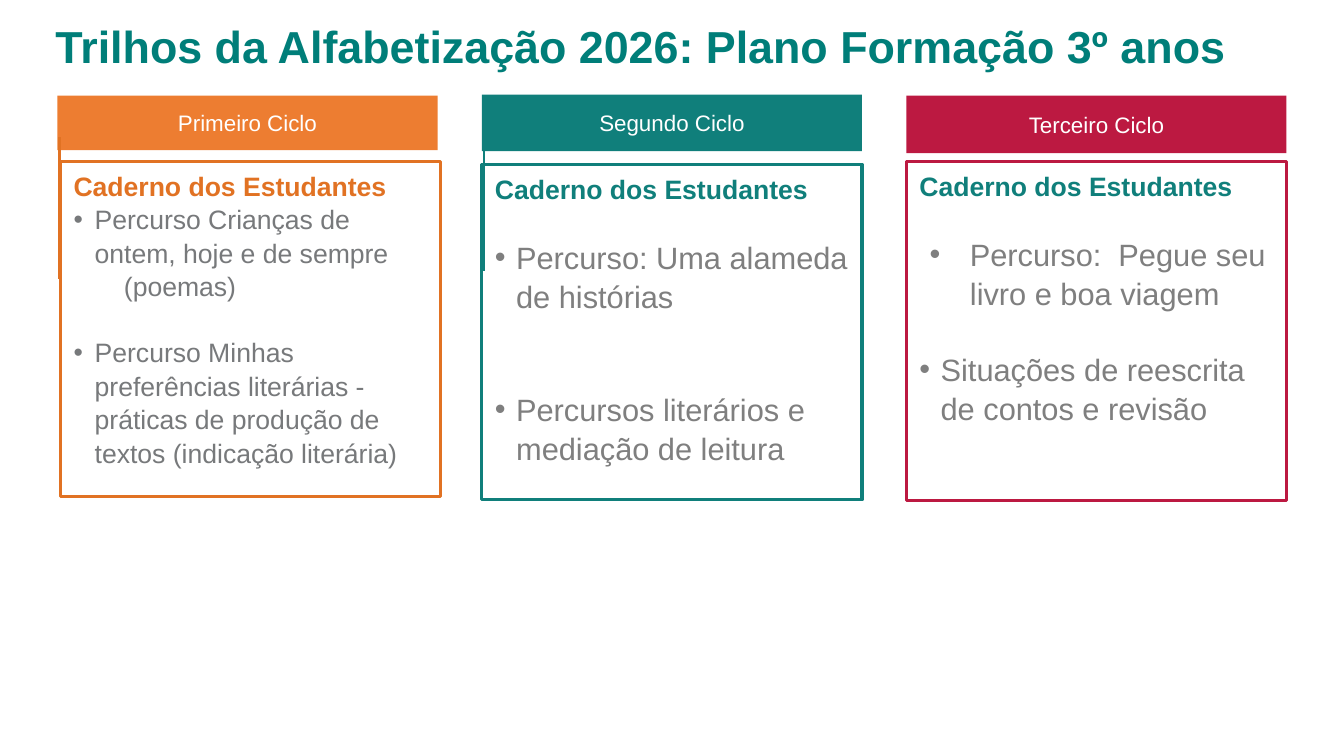
from dataclasses import dataclass

from lxml import etree
from pptx import Presentation
from pptx.dml.color import RGBColor
from pptx.enum.shapes import MSO_CONNECTOR, MSO_SHAPE
from pptx.enum.text import MSO_ANCHOR, MSO_AUTO_SIZE, PP_ALIGN
from pptx.oxml.ns import qn
from pptx.util import Inches, Pt


@dataclass(frozen=True)
class Theme:
    font: str = "Arial"
    title: str = "007E79"
    white: str = "FFFFFF"
    orange: str = "ED7D31"
    dark_orange: str = "E17223"
    teal: str = "107F7B"
    crimson: str = "BC1941"
    slate: str = "77797B"
    gray: str = "7F7F7F"
    title_size: int = 32
    header_size: int = 16
    small_size: int = 19
    large_size: int = 22
    line_spacing: float = 1.05


THEME = Theme()
COLUMN_LEFT, COLUMN_STEP, COLUMN_WIDTH = 0.57, 4.21, 3.77
HEADING = "Caderno dos Estudantes"


@dataclass(frozen=True)
class Item:
    text: str
    gap: float = 0  # points before the paragraph
    margin: float = 0.21
    hanging: float = 0.21  # zero means no bullet


@dataclass(frozen=True)
class Cycle:
    name: str
    header: tuple  # top, height, fill
    box: tuple  # left offset, top, height, line colour
    heading_color: str
    body: tuple  # size, colour
    items: tuple


CYCLES = (
    Cycle("Primeiro Ciclo", (0.95, 0.54, THEME.orange),
          (0.03, 1.6, 3.33, THEME.dark_orange), THEME.dark_orange,
          (THEME.small_size, THEME.slate), (
              Item("Percurso Crianças de ontem, hoje e de sempre"),
              Item("(poemas)", margin=0.5, hanging=0),
              Item("Percurso Minhas preferências literárias - práticas de "
                   "produção de textos (indicação literária)", gap=23))),
    Cycle("Segundo Ciclo", (0.94, 0.56, THEME.teal),
          (0, 1.63, 3.33, THEME.teal), THEME.teal,
          (THEME.large_size, THEME.gray), (
              Item("Percurso: Uma alameda de histórias", gap=23),
              Item("Percursos literários e mediação de leitura", gap=53))),
    Cycle("Terceiro Ciclo", (0.95, 0.57, THEME.crimson),
          (0, 1.6, 3.37, THEME.crimson), THEME.teal,
          (THEME.large_size, THEME.gray), (
              Item("Percurso:  Pegue seu livro e boa viagem",
                   gap=23, margin=0.5, hanging=0.4),
              Item("Situações de reescrita de contos e revisão", gap=26.5))),
)


def color(value):
    return RGBColor.from_string(value)


def format_runs(paragraph, size, value, bold=False):
    for run in paragraph.runs:
        run.font.name = THEME.font
        run.font.size = Pt(size)
        run.font.bold = bold
        run.font.color.rgb = color(value)


def set_insets(text_frame, horizontal, vertical):
    text_frame.margin_left = text_frame.margin_right = Inches(horizontal)
    text_frame.margin_top = text_frame.margin_bottom = Inches(vertical)


def set_bullet(paragraph, item, value):
    properties = paragraph._p.get_or_add_pPr()
    properties.set("marL", str(Inches(item.margin)))
    properties.set("indent", str(-Inches(item.hanging)))
    if item.hanging:
        bullet_color = etree.SubElement(properties, qn("a:buClr"))
        etree.SubElement(bullet_color, qn("a:srgbClr"), val=value)
        etree.SubElement(properties, qn("a:buFont"), typeface=THEME.font)
        etree.SubElement(properties, qn("a:buChar"), char="•")


def add_title(slide, text):
    title = slide.shapes.title
    title.left, title.top = Inches(0.55), Inches(0.19)
    title.width, title.height = Inches(12.4), Inches(0.54)
    text_frame = title.text_frame
    text_frame.text = text
    text_frame.auto_size = MSO_AUTO_SIZE.NONE
    text_frame.vertical_anchor = MSO_ANCHOR.TOP
    set_insets(text_frame, 0, 0)
    text_frame.paragraphs[0].alignment = PP_ALIGN.LEFT
    format_runs(text_frame.paragraphs[0], THEME.title_size, THEME.title, True)


def add_rectangle(slide, left, top, height):
    shape = slide.shapes.add_shape(
        MSO_SHAPE.RECTANGLE, Inches(left), Inches(top),
        Inches(COLUMN_WIDTH), Inches(height))
    shape.shadow.inherit = False
    shape.text_frame.word_wrap = True
    return shape


def add_header(slide, left, cycle):
    top, height, fill = cycle.header
    shape = add_rectangle(slide, left, top, height)
    shape.fill.solid()
    shape.fill.fore_color.rgb = color(fill)
    shape.line.fill.background()
    shape.text_frame.text = cycle.name
    shape.text_frame.vertical_anchor = MSO_ANCHOR.MIDDLE
    paragraph = shape.text_frame.paragraphs[0]
    paragraph.alignment = PP_ALIGN.CENTER
    format_runs(paragraph, THEME.header_size, THEME.white)


def add_content_box(slide, left, cycle):
    offset, top, height, line_color = cycle.box
    shape = add_rectangle(slide, left + offset, top, height)
    shape.fill.background()
    shape.line.color.rgb = color(line_color)
    shape.line.width = Pt(2.25)
    text_frame = shape.text_frame
    text_frame.vertical_anchor = MSO_ANCHOR.TOP
    set_insets(text_frame, 0.13, 0.07)
    text_frame.text = HEADING
    format_runs(text_frame.paragraphs[0], THEME.small_size,
                cycle.heading_color, True)
    size, text_color = cycle.body
    for item in cycle.items:
        paragraph = text_frame.add_paragraph()
        paragraph.text = item.text
        set_bullet(paragraph, item, text_color)
        paragraph.space_before = Pt(item.gap)
        format_runs(paragraph, size, text_color)
    for paragraph in text_frame.paragraphs:
        paragraph.alignment = PP_ALIGN.LEFT
        paragraph.line_spacing = THEME.line_spacing


def add_vertical_line(slide, left, top, bottom, value):
    connector = slide.shapes.add_connector(
        MSO_CONNECTOR.STRAIGHT, Inches(left), Inches(top),
        Inches(left), Inches(bottom))
    connector.line.color.rgb = color(value)
    connector.line.width = Pt(1.5)
    etree.SubElement(connector._element.spPr, qn("a:effectLst"))


def main():
    presentation = Presentation()
    presentation.slide_width = Inches(13.33)
    presentation.slide_height = Inches(7.5)
    slide = presentation.slides.add_slide(presentation.slide_layouts[5])

    add_title(slide, "Trilhos da Alfabetização 2026: Plano Formação 3º anos")

    # One column per cycle
    for index, cycle in enumerate(CYCLES):
        left = COLUMN_LEFT + index * COLUMN_STEP
        add_header(slide, left, cycle)
        add_content_box(slide, left, cycle)

    # Lines joining the first two headers to their boxes
    for index, bottom in enumerate((2.77, 2.69)):
        left = COLUMN_LEFT + index * COLUMN_STEP + 0.02
        add_vertical_line(slide, left, 1.36, bottom, CYCLES[index].box[3])

    presentation.save("out.pptx")


if __name__ == "__main__":
    main()
